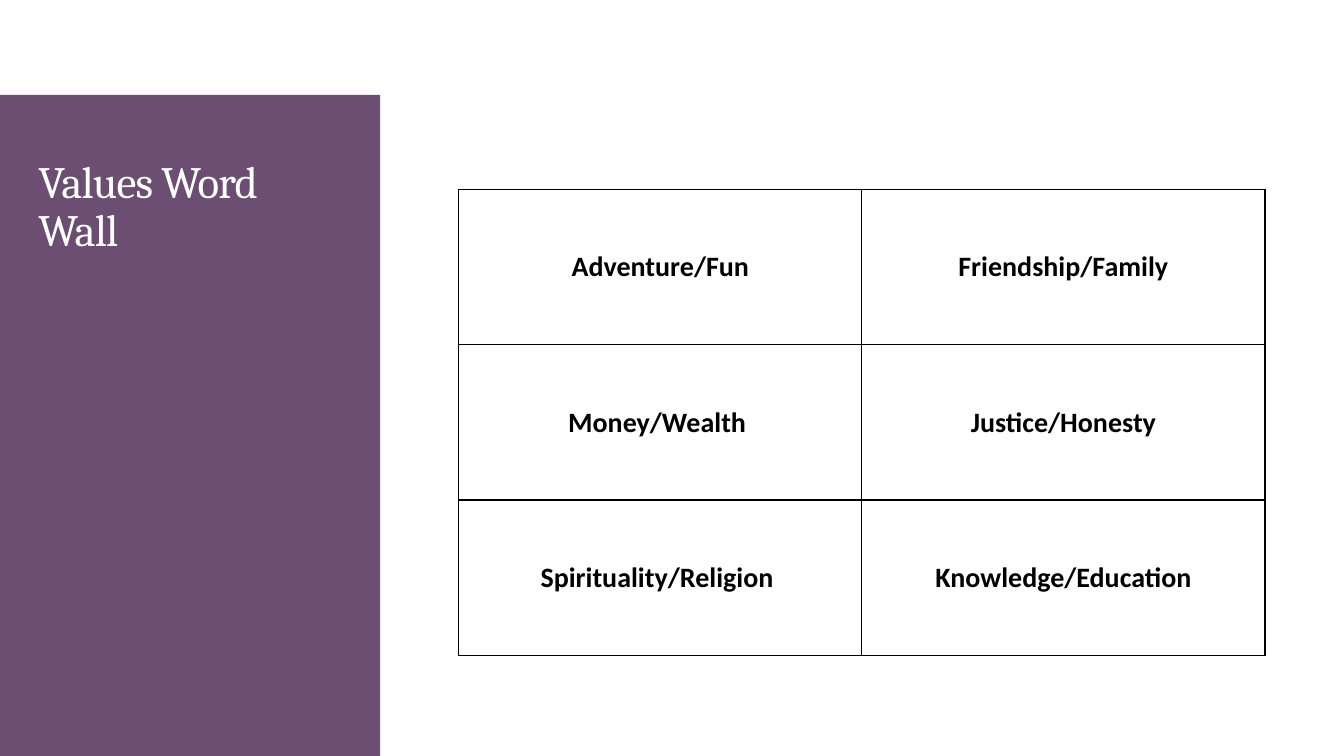
import dataclasses
import typing

import lxml.etree
import pptx
import pptx.dml.color
import pptx.enum.shapes
import pptx.enum.text
import pptx.oxml.ns
import pptx.util

Cm = pptx.util.Cm
Pt = pptx.util.Pt
RGB = pptx.dml.color.RGBColor
qn = pptx.oxml.ns.qn


@dataclasses.dataclass(frozen=True)
class Theme:
    plum: str = "6B4E71"
    white: str = "FFFFFF"
    black: str = "000000"
    head: str = "Cambria"
    body: str = "Calibri"
    big: int = 32
    mid: int = 20
    rule: int = 1


@dataclasses.dataclass(frozen=True)
class Box:
    left: float
    top: float
    width: float
    height: float

    def place(self) -> dict[str, int]:
        return {k: Cm(v) for k, v in dataclasses.asdict(self).items()}


LOOK = Theme()
PANEL = Box(0, 2.39, 9.58, 16.66)
TITLE = Box(0.71, 3.89, 8.18, 14.05)
WALL = Box(11.56, 4.78, 20.32, 11.73)

# The trailing spaces belong to the wording
WORDS = [
    ("Adventure/Fun", "Friendship/Family"),
    ("Money/Wealth ", "Justice/Honesty"),
    ("Spirituality/Religion ", "Knowledge/Education"),
]


def apply(item: typing.Any, form: dict[str, typing.Any]) -> None:
    for key, val in form.items():
        setattr(item, key, val)


def write(frame: typing.Any, text: str, para: dict, font: dict, color: str) -> typing.Any:
    line = frame.paragraphs[0]
    apply(line, para)
    run = line.add_run()
    run.text = text
    apply(run.font, font)
    run.font.color.rgb = RGB.from_string(color)
    return run


def add_panel(slide: typing.Any) -> None:
    panel = slide.shapes.add_shape(
        pptx.enum.shapes.MSO_SHAPE.RECTANGLE, **PANEL.place())
    panel.shadow.inherit = False
    panel.fill.solid()
    panel.fill.fore_color.rgb = RGB.from_string(LOOK.plum)
    panel.line.fill.background()
    # Send behind the title
    slide.shapes._spTree.insert(2, panel._element)


def set_title(slide: typing.Any) -> None:
    title = slide.shapes.title
    apply(title, TITLE.place())
    frame = title.text_frame
    apply(frame, {"word_wrap": True,
                  "auto_size": pptx.enum.text.MSO_AUTO_SIZE.NONE,
                  "vertical_anchor": pptx.enum.text.MSO_ANCHOR.TOP})
    run = write(frame, "Values Word Wall",
                {"alignment": pptx.enum.text.PP_ALIGN.LEFT, "line_spacing": 0.9},
                {"name": LOOK.head, "size": Pt(LOOK.big)}, LOOK.white)
    run.font._element.set("spc", "-60")


def add_edges(cell: typing.Any) -> None:
    props = cell._tc.get_or_add_tcPr()
    for spot, side in enumerate(("lnL", "lnR", "lnT", "lnB")):
        edge = lxml.etree.Element(qn(f"a:{side}"), w=str(Pt(LOOK.rule)))
        fill = lxml.etree.SubElement(edge, qn("a:solidFill"))
        lxml.etree.SubElement(fill, qn("a:srgbClr"), val=LOOK.black)
        props.insert(spot, edge)


def add_wall(slide: typing.Any) -> None:
    rows, cols = len(WORDS), len(WORDS[0])
    table = slide.shapes.add_table(rows, cols, **WALL.place()).table
    apply(table, {"first_row": False, "horz_banding": False})
    for row, words in enumerate(WORDS):
        for col, word in enumerate(words):
            cell = table.cell(row, col)
            cell.fill.background()
            cell.vertical_anchor = pptx.enum.text.MSO_ANCHOR.MIDDLE
            write(cell.text_frame, word,
                  {"alignment": pptx.enum.text.PP_ALIGN.CENTER},
                  {"name": LOOK.body, "size": Pt(LOOK.mid), "bold": True},
                  LOOK.black)
            add_edges(cell)


def main() -> None:
    deck = pptx.Presentation()
    apply(deck, {"slide_width": Cm(33.87), "slide_height": Cm(19.05)})
    slide = deck.slides.add_slide(deck.slide_layouts.get_by_name("Title Only"))
    add_panel(slide)
    set_title(slide)
    add_wall(slide)
    deck.save("out.pptx")


if __name__ == "__main__":
    main()
